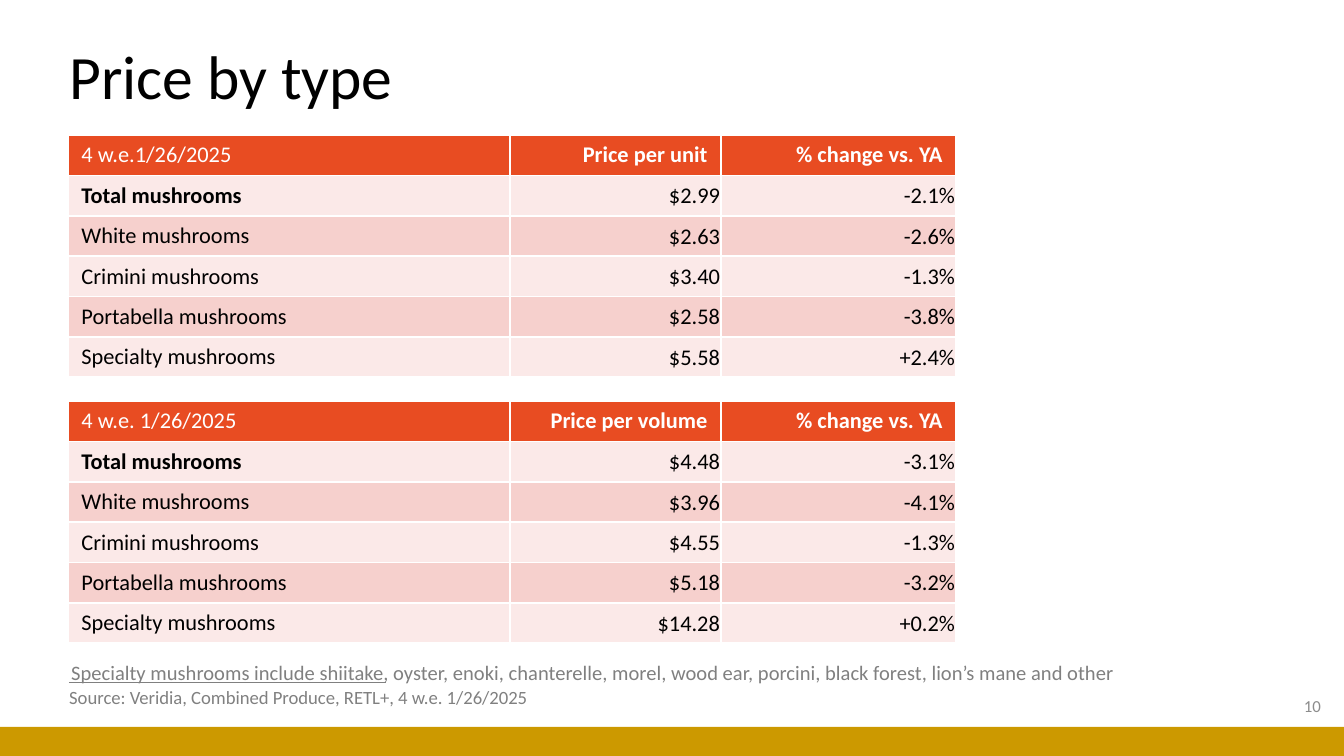
from lxml import etree
from pptx import Presentation
from pptx import util as u
from pptx.dml.color import RGBColor
from pptx.enum import shapes, text
from pptx.oxml import ns

EMU_PER_PX = 914400 / 134.4
FONT = "Calibri"
LEFT, RIGHT = text.PP_ALIGN.LEFT, text.PP_ALIGN.RIGHT
MIDDLE = text.MSO_ANCHOR.MIDDLE
COLUMN_WIDTHS = (442, 211, 235)
MUSHROOMS = [f"{kind} mushrooms" for kind in
             ("Total", "White", "Crimini", "Portabella", "Specialty")]
UNIT_PRICES = [("$2.99", "-2.1%"), ("$2.63", "-2.6%"), ("$3.40", "-1.3%"),
               ("$2.58", "-3.8%"), ("$5.58", "+2.4%")]
VOLUME_PRICES = [("$4.48", "-3.1%"), ("$3.96", "-4.1%"), ("$4.55", "-1.3%"),
                 ("$5.18", "-3.2%"), ("$14.28", "+0.2%")]


def px(length):
    return u.Emu(round(length * EMU_PER_PX))


def box_emu(box):
    return [px(length) for length in box]


def rgb(hex_color):
    return RGBColor.from_string(hex_color)


def write(frame, words, size, color, bold=False, align=LEFT):
    frame.text = words
    paragraph = frame.paragraphs[0]
    paragraph.alignment = align
    for run in paragraph.runs:
        run.font.name = FONT
        run.font.size = u.Pt(size)
        run.font.bold = bold
        run.font.color.rgb = rgb(color)


def add_title(slide, box, words):
    title = slide.shapes.title
    title.left, title.top, title.width, title.height = box_emu(box)
    frame = title.text_frame
    frame.vertical_anchor = MIDDLE
    write(frame, words, 33, "000000")
    frame.paragraphs[0].line_spacing = 0.9


def add_text(slide, box, words, size, color, align=LEFT, wrap=False):
    frame = slide.shapes.add_textbox(*box_emu(box)).text_frame
    frame.word_wrap = wrap
    write(frame, words, size, color, align=align)
    return frame


def add_footer_bar(slide, box):
    bar = slide.shapes.add_shape(shapes.MSO_SHAPE.RECTANGLE, *box_emu(box))
    bar.shadow.inherit = False
    bar.fill.solid()
    bar.fill.fore_color.rgb = rgb("CC9900")
    bar.line.fill.background()


def add_note_rule(slide, left, right, y):
    rule = slide.shapes.add_connector(
        shapes.MSO_CONNECTOR.STRAIGHT, px(left), px(y), px(right), px(y))
    rule.line.color.rgb = rgb("808080")
    rule.line.width = u.Pt(0.5)
    etree.SubElement(rule._element.spPr, ns.qn("a:effectLst"))


def add_cell_borders(cell, color):
    """Draw a 1 pt line on all four sides; call before filling the cell."""
    properties = cell._tc.get_or_add_tcPr()
    for side in ("lnL", "lnR", "lnT", "lnB"):
        line = etree.SubElement(properties, ns.qn(f"a:{side}"), w=str(u.Pt(1)))
        fill = etree.SubElement(line, ns.qn("a:solidFill"))
        etree.SubElement(fill, ns.qn("a:srgbClr"), val=color)


def format_cell(cell, words, row, column):
    header = row == 0
    add_cell_borders(cell, "FFFFFF")
    cell.fill.solid()
    cell.fill.fore_color.rgb = rgb(
        "E84C22" if header else ("F6D0CD", "FBE9E8")[row % 2])
    if not header:
        cell.vertical_anchor = MIDDLE
        if column:
            cell.margin_left = cell.margin_top = cell.margin_right = px(1)
            cell.margin_bottom = 0
    write(cell.text_frame, words, 12, "FFFFFF" if header else "000000",
          bold=(header and column > 0) or (row == 1 and column == 0),
          align=RIGHT if column else LEFT)


def add_price_table(slide, box, period, measure, prices):
    rows = [(period, measure, "% change vs. YA")]
    rows += [(name, *values) for name, values in zip(MUSHROOMS, prices)]
    table = slide.shapes.add_table(
        len(rows), len(COLUMN_WIDTHS), *box_emu(box)).table
    for column, width in zip(table.columns, COLUMN_WIDTHS):
        column.width = px(width)
    for r, values in enumerate(rows):
        table.rows[r].height = px(box[3] / len(rows))
        for c, words in enumerate(values):
            format_cell(table.cell(r, c), words, r, c)


def main():
    deck = Presentation()
    deck.slide_width, deck.slide_height = px(1344), px(756)
    slide = deck.slides.add_slide(deck.slide_layouts[5])

    add_footer_bar(slide, (0, 727, 1344, 29))
    add_title(slide, (56, 7, 1159, 146), "Price by type")
    number = add_text(slide, (1032, 685, 302, 41), "10", 9, "8C8C8C",
                      align=RIGHT, wrap=True)
    number.vertical_anchor = MIDDLE

    add_note_rule(slide, 69, 386, 683)
    add_text(slide, (56, 679, 500, 36),
             "Source: Veridia, Combined Produce, RETL+, 4 w.e. 1/26/2025",
             10, "808080")
    add_text(slide, (58, 653, 1113, 39),
             "Specialty mushrooms include shiitake, oyster, enoki, chanterelle, "
             "morel, wood ear, porcini, black forest, lion’s mane and other",
             11, "808080")

    table_width = sum(COLUMN_WIDTHS)
    add_price_table(slide, (68, 135, table_width, 242),
                    "4 w.e.1/26/2025", "Price per unit", UNIT_PRICES)
    add_price_table(slide, (68, 401, table_width, 242),
                    "4 w.e. 1/26/2025", "Price per volume", VOLUME_PRICES)
    deck.save("out.pptx")


if __name__ == "__main__":
    main()
